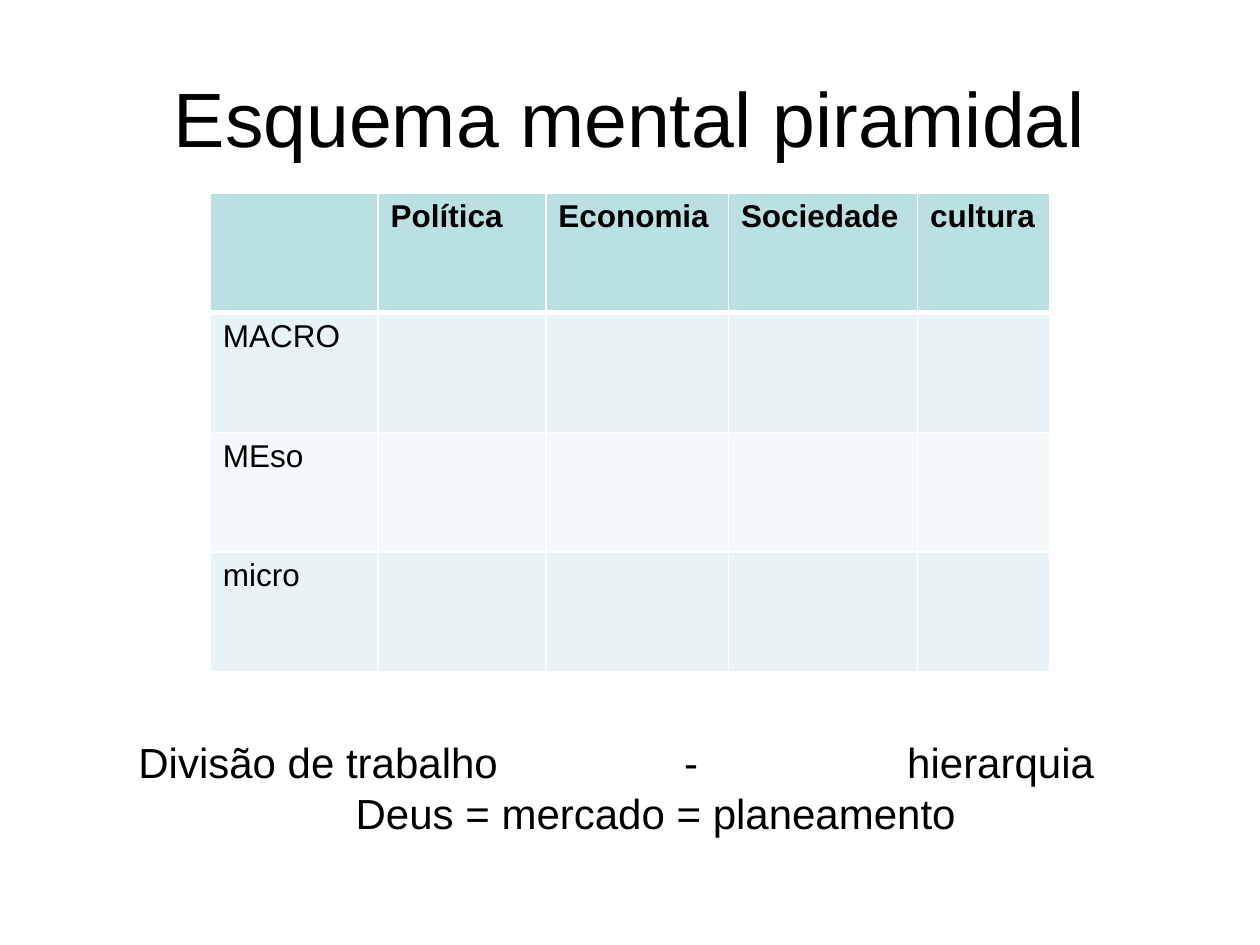
import pptx
import pptx.dml.color
import pptx.enum.text
import pptx.oxml
import pptx.oxml.ns
import pptx.util

Cm, Pt = pptx.util.Cm, pptx.util.Pt
PP_ALIGN, MSO_ANCHOR = pptx.enum.text.PP_ALIGN, pptx.enum.text.MSO_ANCHOR
FONT = "Arial"
COLORS = {"text": "000000", "border": "FFFFFF", "header": "BBE0E3",
          "odd": "E7F3F4", "even": "F3F9FA"}
ROWS = [
    ["", "Política", "Economia", "Sociedade", "cultura"],
    ["MACRO", "", "", "", ""],
    ["MEso", "", "", "", ""],
    ["micro", "", "", "", ""],
]
COL_WIDTHS = [3.38, 3.38, 3.68, 3.81, 2.67]


def rgb(name):
    return pptx.dml.color.RGBColor.from_string(COLORS[name])


def write(p, text, size=18, bold=False, align=None):
    p.alignment = align
    r = p.add_run()
    r.text = text
    r.font.name, r.font.size, r.font.bold = FONT, Pt(size), bold
    r.font.color.rgb = rgb("text")


def add_tabs(p, *stops):
    """Set left tab stops, in cm from the text's left edge."""
    tabs = "".join(f'<a:tab pos="{Cm(x)}" algn="l"/>' for x in stops)
    p._p.get_or_add_pPr().append(pptx.oxml.parse_xml(
        f'<a:tabLst {pptx.oxml.ns.nsdecls("a")}>{tabs}</a:tabLst>'))


def set_borders(cell, **widths):
    """Draw cell borders; widths are points by side, 1 unless given."""
    tcPr = cell._tc.get_or_add_tcPr()
    for side in "LRTB":
        tcPr.append(pptx.oxml.parse_xml(
            f'<a:ln{side} {pptx.oxml.ns.nsdecls("a")} w="{Pt(widths.get(side, 1))}">'
            f'<a:solidFill><a:srgbClr val="{COLORS["border"]}"/></a:solidFill>'
            f'</a:ln{side}>'))


def place_title(s, left, top, width, height):
    sp = s.shapes.title
    sp.left, sp.top, sp.width, sp.height = left, top, width, height
    sp.text_frame.vertical_anchor = MSO_ANCHOR.MIDDLE
    write(sp.text_frame.paragraphs[0], "Esquema mental piramidal",
          size=44, align=PP_ALIGN.CENTER)


def place_matrix(s, left, top, width, height):
    table = s.shapes.add_table(len(ROWS), len(COL_WIDTHS),
                               left, top, width, height).table
    for column, share in zip(table.columns, COL_WIDTHS):
        column.width = int(width * share / sum(COL_WIDTHS))
    for i, row in enumerate(ROWS):
        fill = "header" if i == 0 else "odd" if i % 2 else "even"
        for j, text in enumerate(row):
            cell = table.cell(i, j)
            set_borders(cell, **{0: {"B": 3}, 1: {"T": 3}}.get(i, {}))
            cell.fill.solid()
            cell.fill.fore_color.rgb = rgb(fill)
            if text:
                write(cell.text_frame.paragraphs[0], text, bold=i == 0)


def place_summary(s, left, top, width, height):
    tf = s.shapes.add_textbox(left, top, width, height).text_frame
    tf.word_wrap = True
    tf.auto_size = pptx.enum.text.MSO_AUTO_SIZE.SHAPE_TO_FIT_TEXT
    p = tf.paragraphs[0]
    add_tabs(p, 11, 15.5)
    write(p, "Divisão de trabalho\t-\thierarquia", size=24)
    write(tf.add_paragraph(), "Deus = mercado = planeamento ",
          size=24, align=PP_ALIGN.CENTER)


def main():
    prs = pptx.Presentation()
    prs.slide_width, prs.slide_height = Cm(25.4), Cm(19.05)
    s = prs.slides.add_slide(prs.slide_layouts[5])
    place_title(s, Cm(1.27), Cm(0.76), Cm(22.86), Cm(3.18))
    place_matrix(s, Cm(4.24), Cm(3.89), Cm(16.93), Cm(9.65))
    place_summary(s, Cm(2.54), Cm(14.73), Cm(21.59), Cm(2.31))
    prs.save("out.pptx")


if __name__ == "__main__":
    main()
